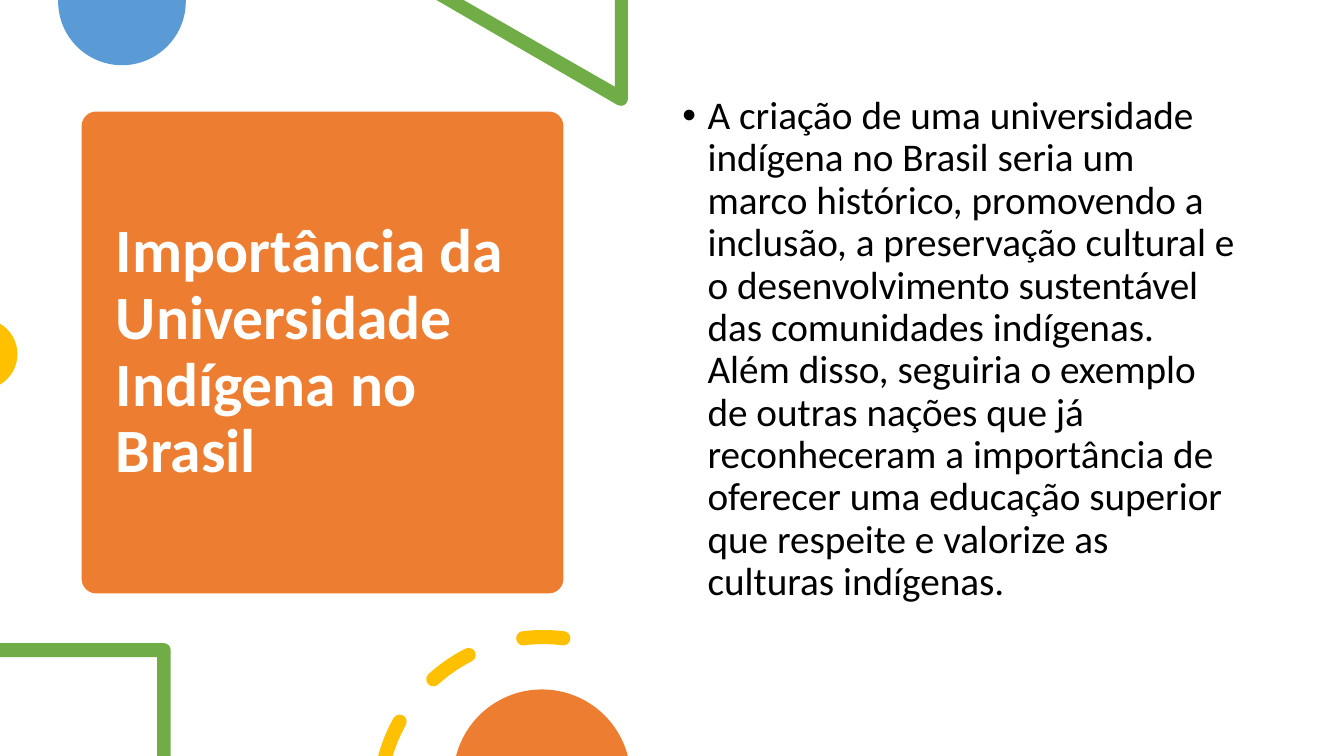
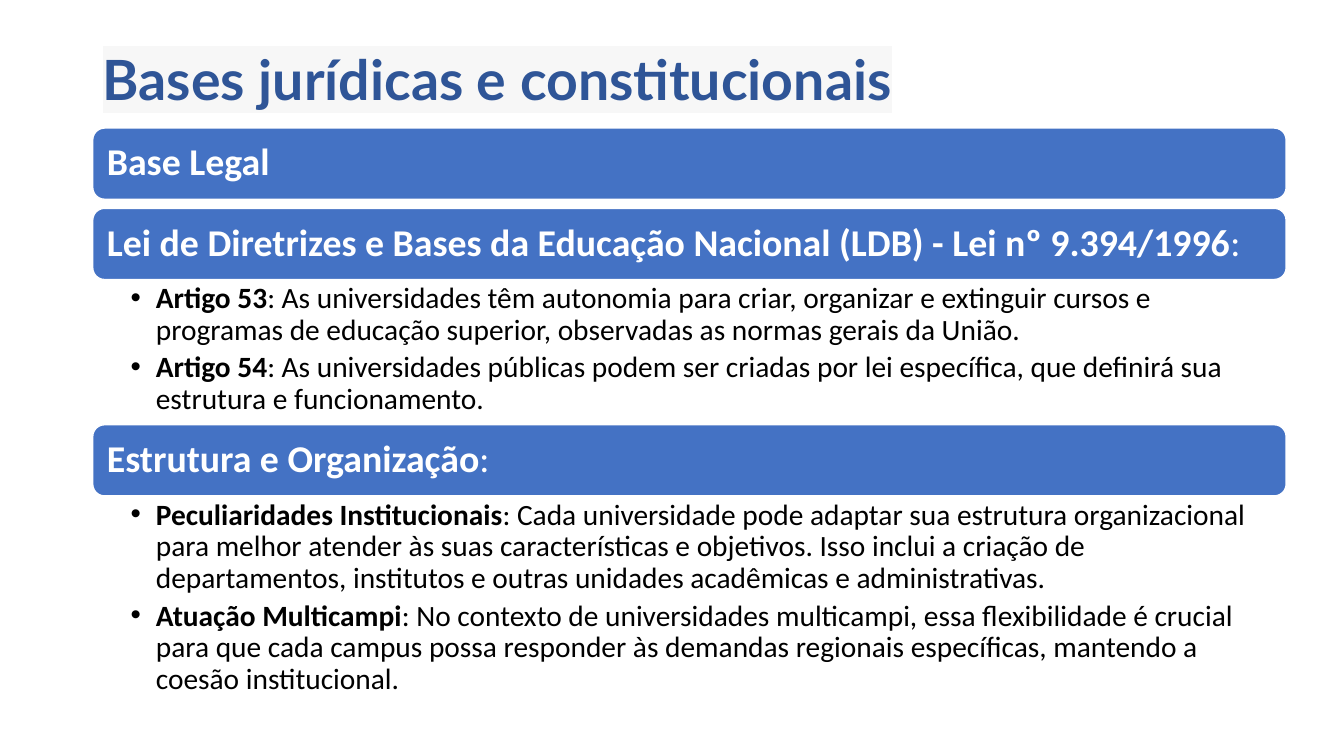
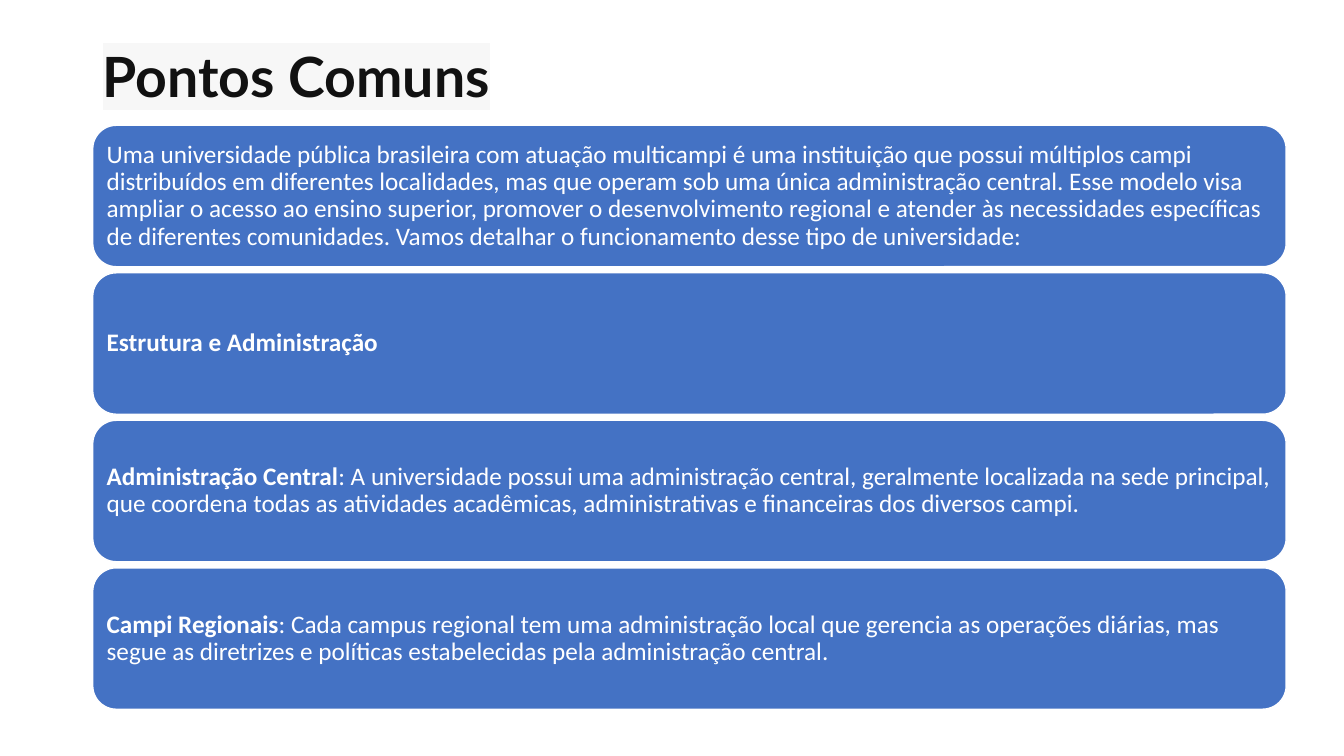
import math

import pptx
import pptx.dml.color
import pptx.enum.shapes
import pptx.enum.text
import pptx.oxml.ns
import pptx.util
from lxml import etree

PX = 3048
SLIDE_WIDTH, SLIDE_HEIGHT = 4000, 2250

RGB = pptx.dml.color.RGBColor
WHITE = RGB(0xFF, 0xFF, 0xFF)
BLACK = RGB(0x00, 0x00, 0x00)
ORANGE = RGB(0xED, 0x7D, 0x31)
SKY = RGB(0x5B, 0x9B, 0xD5)
GREEN = RGB(0x70, 0xAD, 0x47)
YELLOW = RGB(0xFF, 0xC0, 0x00)
BLUE = RGB(0x44, 0x72, 0xC4)
NAVY = RGB(0x2F, 0x55, 0x97)
INK = RGB(0x11, 0x11, 0x11)
HIGHLIGHT = RGB(0xF7, 0xF7, 0xF7)

ROUNDED = pptx.enum.shapes.MSO_SHAPE.ROUNDED_RECTANGLE
TOP = pptx.enum.text.MSO_ANCHOR.TOP
MIDDLE = pptx.enum.text.MSO_ANCHOR.MIDDLE

CONTENT_LEFT, CONTENT_WIDTH = 276, 3552
BULLET_INDENT = 75

LEGAL_SECTIONS = [
    (("Base Legal", ""), [], 0),
    (("Lei de Diretrizes e Bases da Educação Nacional (LDB) - Lei nº 9.394/1996", ":"), [
        ("Artigo 53", ": As universidades têm autonomia para criar, organizar e extinguir cursos e "
         "programas de educação superior, observadas as normas gerais da União."),
        ("Artigo 54", ": As universidades públicas podem ser criadas por lei específica, que definirá "
         "sua estrutura e funcionamento."),
    ], 432),
    (("Estrutura e Organização", ":"), [
        ("Peculiaridades Institucionais", ": Cada universidade pode adaptar sua estrutura "
         "organizacional para melhor atender às suas características e objetivos. Isso inclui a "
         "criação de departamentos, institutos e outras unidades acadêmicas e administrativas."),
        ("Atuação Multicampi", ": No contexto de universidades multicampi, essa flexibilidade é "
         "crucial para que cada campus possa responder às demandas regionais específicas, mantendo "
         "a coesão institucional."),
    ], 624),
]

COMMON_POINTS = [
    ("", "Uma universidade pública brasileira com atuação multicampi é uma instituição que possui "
     "múltiplos campi distribuídos em diferentes localidades, mas que operam sob uma única "
     "administração central. Esse modelo visa ampliar o acesso ao ensino superior, promover o "
     "desenvolvimento regional e atender às necessidades específicas de diferentes comunidades. "
     "Vamos detalhar o funcionamento desse tipo de universidade:"),
    ("Estrutura e Administração", ""),
    ("Administração Central", ": A universidade possui uma administração central, geralmente "
     "localizada na sede principal, que coordena todas as atividades acadêmicas, administrativas e "
     "financeiras dos diversos campi."),
    ("Campi Regionais", ": Cada campus regional tem uma administração local que gerencia as "
     "operações diárias, mas segue as diretrizes e políticas estabelecidas pela administração "
     "central."),
]

IMPORTANCE = (
    "A criação de uma universidade indígena no Brasil seria um marco histórico, promovendo a "
    "inclusão, a preservação cultural e o desenvolvimento sustentável das comunidades indígenas. "
    "Além disso, seguiria o exemplo de outras nações que já reconheceram a importância de oferecer "
    "uma educação superior que respeite e valorize as culturas indígenas."
)


def emu(*lengths):
    return [round(length * PX) for length in lengths]


def add_child(parent, tag, **attributes):
    return etree.SubElement(parent, pptx.oxml.ns.qn(tag), attributes)


def add_bullet(paragraph):
    properties = paragraph._p.get_or_add_pPr()
    indent = BULLET_INDENT * PX
    properties.set("marL", str(indent))
    properties.set("indent", str(-indent))
    add_child(properties, "a:buFont", typeface="Arial")
    add_child(properties, "a:buChar", char="•")


def add_highlight(run, color):
    fill = run.font._element.find(pptx.oxml.ns.qn("a:solidFill"))
    highlight = etree.Element(pptx.oxml.ns.qn("a:highlight"))
    add_child(highlight, "a:srgbClr", val=str(color))
    fill.addnext(highlight)


def write(frame, paragraphs, size, color, font="Calibri", anchor=TOP, insets=(30, 15, 30, 15),
          bullets=False, space_after=0, highlight=None):
    frame.word_wrap = True
    frame.auto_size = pptx.enum.text.MSO_AUTO_SIZE.NONE
    frame.vertical_anchor = anchor
    frame.margin_left, frame.margin_top, frame.margin_right, frame.margin_bottom = emu(*insets)
    for index, parts in enumerate(paragraphs):
        paragraph = frame.add_paragraph() if index else frame.paragraphs[0]
        if bullets:
            add_bullet(paragraph)
        paragraph.alignment = pptx.enum.text.PP_ALIGN.LEFT
        paragraph.line_spacing = 0.9
        paragraph.space_before = pptx.util.Pt(0)
        paragraph.space_after = pptx.util.Pt(space_after)
        for text, bold in zip(parts, (True, False)):
            if not text:
                continue
            run = paragraph.add_run()
            run.text = text
            run.font.size = pptx.util.Pt(size)
            run.font.bold = bold
            run.font.color.rgb = color
            run.font.name = font
            if highlight is not None:
                add_highlight(run, highlight)


def place(shape, left, top, width, height):
    shape.left, shape.top, shape.width, shape.height = emu(left, top, width, height)
    return shape


def paint(shape, color, outline=None):
    shape.shadow.inherit = False
    shape.fill.solid()
    shape.fill.fore_color.rgb = color
    if outline is None:
        shape.line.fill.background()
    else:
        shape.line.color.rgb = outline
        shape.line.width = pptx.util.Pt(1)
    return shape


def corners(*points):
    return [(point,) for point in points]


def arc(center, radius, start, end):
    def at(angle, along=0):
        cos, sin = math.cos(math.radians(angle)), math.sin(math.radians(angle))
        return (center[0] + radius * (cos - along * sin),
                center[1] + radius * (sin + along * cos))

    low, high = sorted((start, end))
    axes = [angle for angle in range(-360, 721, 90) if low < angle < high]
    stops = sorted([start, *axes, end], reverse=start > end)
    steps = corners(at(start))
    for first, last in zip(stops, stops[1:]):
        handle = 4 / 3 * math.tan(math.radians(last - first) / 4)
        steps.append((at(first, handle), at(last, -handle), at(last)))
    return steps


def add_outline(slide, color, *contours):
    builder = slide.shapes.build_freeform(*emu(*contours[0][0][0]), scale=1.0)
    for index, (start, *steps) in enumerate(contours):
        if index:
            builder.move_to(*emu(*start[0]))
        builder.add_line_segments([emu(*point) for step in steps for point in step], close=True)
    outline = paint(builder.convert_to_shape(), color)
    segments = iter(list(outline.element.iter(pptx.oxml.ns.qn("a:lnTo"))))
    for step in (step for contour in contours for step in contour[1:]):
        handles = [next(segments) for _ in step]
        if len(handles) == 3:
            curve = etree.Element(pptx.oxml.ns.qn("a:cubicBezTo"))
            handles[0].addprevious(curve)
            for handle in handles:
                curve.append(handle[0])
                handle.getparent().remove(handle)


def dash(center, radius, start, end, half=21):
    def cap(angle, turn):
        middle = arc(center, radius, angle, angle)[0][0]
        return arc(middle, half, turn, turn + 180)[1:]

    def bottom_edge(edge_radius):
        return 180 + math.degrees(math.asin((center[1] - SLIDE_HEIGHT) / edge_radius))

    outer, inner = radius + half, radius - half
    clipped = start < bottom_edge(radius)
    outer_start = bottom_edge(outer) if clipped else start
    inner_start = bottom_edge(inner) if clipped else start
    contour = (arc(center, outer, outer_start, end) + cap(end, end)
               + arc(center, inner, end, inner_start)[1:])
    return contour if clipped else contour + cap(start, start + 180)


def add_bar(slide, top, height, parts, size, inset):
    bar = slide.shapes.add_shape(ROUNDED, *emu(CONTENT_LEFT, top, CONTENT_WIDTH, height))
    paint(bar, BLUE, outline=WHITE)
    write(bar.text_frame, [parts], size, WHITE, anchor=MIDDLE, insets=(inset,) * 4)


def add_bullet_list(slide, top, height, items):
    box = slide.shapes.add_textbox(*emu(CONTENT_LEFT, top, CONTENT_WIDTH, height))
    write(box.text_frame, items, 21, BLACK, insets=(113, 11, 64, 11), bullets=True,
          space_after=4.2)


def add_titled_slide(deck, title, color, height, top_inset):
    slide = deck.slides.add_slide(deck.slide_layouts[5])
    heading = place(slide.shapes.title, CONTENT_LEFT, 120, 3450, height)
    write(heading.text_frame, [(title,)], 39.6, color, font="Lato",
          insets=(30, top_inset, 30, 15), highlight=HIGHLIGHT)
    return slide


def add_top_decorations(slide):
    add_outline(slide, SKY, corners((553, 0)) + arc((363, 4), 190, 0, 180) + corners((173, 0)))
    triangle = corners((1869, 0), (1830, 0), (1830, 258), (1380, 0), (1299, 0))
    add_outline(slide, GREEN, triangle + arc((1848, 294), 21, 120, 0))
    add_outline(slide, YELLOW, arc((-53, 1054), 105, -59.7, 59.7))


def add_bottom_decorations(slide):
    frame = corners((0, 1914), (0, 1956), (468, 1956), (468, 2250), (508, 2250))
    add_outline(slide, GREEN, frame + arc((487, 1935), 21, 0, -90))
    spans = [(180, 209), (228, 243), (263, 277)]
    add_outline(slide, YELLOW, *[dash((1617, 2385), 489, *span) for span in spans])
    add_outline(slide, ORANGE, arc((1613, 2316), 264, 194.5, 345.5))


def build_importance(deck):
    slide = deck.slides.add_slide(deck.slide_layouts[1])
    title = place(slide.shapes.title, 315, 366, 1293, 1368)
    write(title.text_frame, [("Importância da Universidade Indígena no Brasil",)], 44, WHITE,
          anchor=MIDDLE, space_after=8)
    card = paint(slide.shapes.add_shape(ROUNDED, *emu(243, 332, 1434, 1434)), ORANGE)
    card.adjustments[0] = 0.03
    title.element.addprevious(card.element)
    add_top_decorations(slide)
    body = place(slide.placeholders[1], 2001, 270, 1725, 1605)
    write(body.text_frame, [("", IMPORTANCE)], 28, BLACK, bullets=True, space_after=8)
    add_bottom_decorations(slide)


def build_legal_bases(deck):
    slide = add_titled_slide(deck, "Bases jurídicas e constitucionais", NAVY, 276, 38)
    bar_height, bar_gap = 212, 27
    top = 381
    for heading, items, list_height in LEGAL_SECTIONS:
        add_bar(slide, top, bar_height, heading, 27, 32)
        top += bar_height
        if items:
            add_bullet_list(slide, top, list_height, items)
            top += list_height
        else:
            top += bar_gap


def build_common_points(deck):
    slide = add_titled_slide(deck, "Pontos Comuns", INK, 435, 29)
    bar_height, bar_gap = 421, 18
    for row, parts in enumerate(COMMON_POINTS):
        add_bar(slide, 373 + row * (bar_height + bar_gap), bar_height, parts, 18, 21)


def main():
    deck = pptx.Presentation()
    deck.slide_width, deck.slide_height = emu(SLIDE_WIDTH, SLIDE_HEIGHT)
    build_importance(deck)
    build_legal_bases(deck)
    build_common_points(deck)
    deck.save("out.pptx")


if __name__ == "__main__":
    main()
